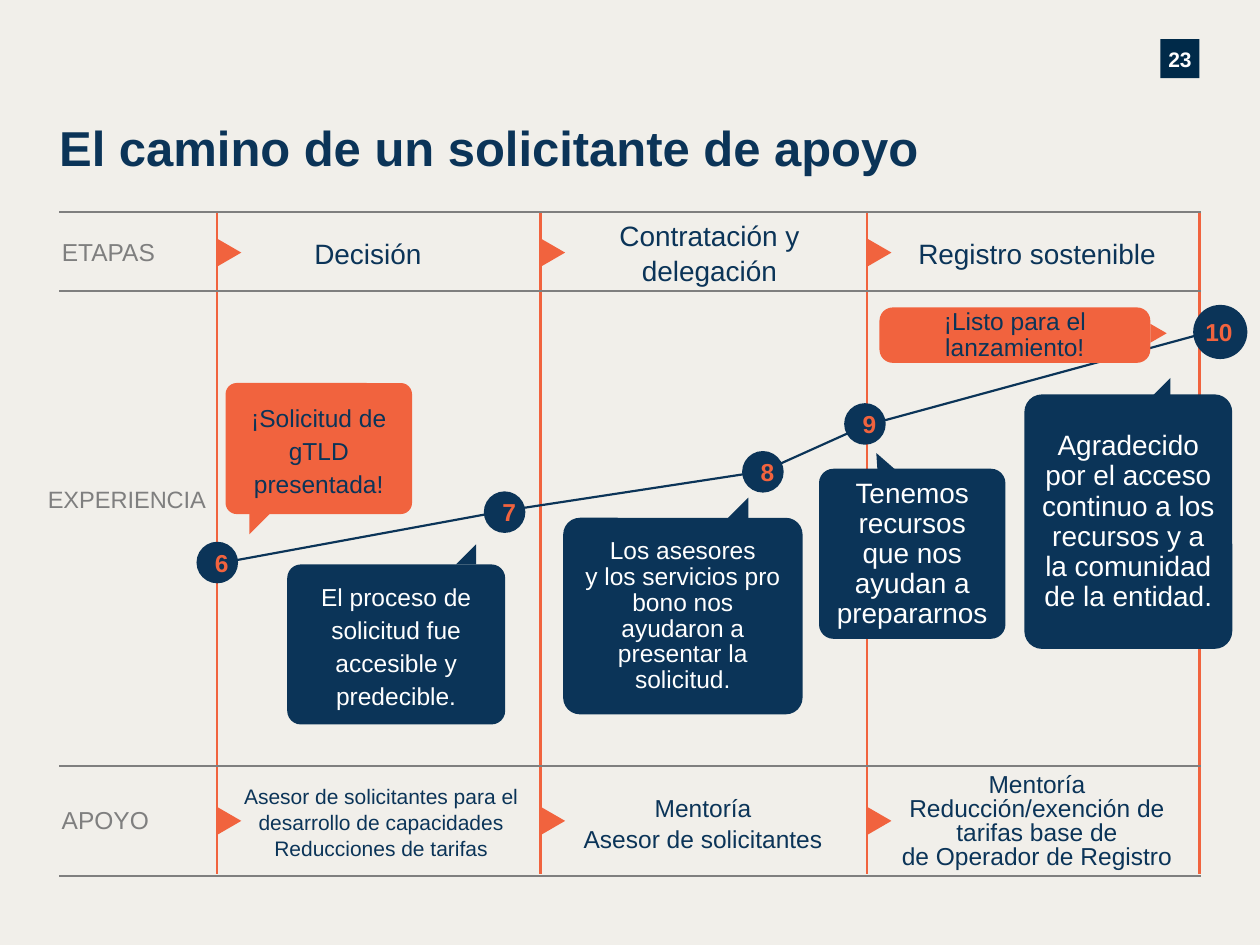
from lxml import etree
from pptx import Presentation
from pptx.dml.color import RGBColor
from pptx.enum.shapes import MSO_CONNECTOR, MSO_SHAPE
from pptx.enum.text import MSO_ANCHOR, MSO_AUTO_SIZE, PP_ALIGN
from pptx.oxml.ns import qn
from pptx.util import Pt

RECTANGLE, ROUNDED, OVAL = MSO_SHAPE.RECTANGLE, MSO_SHAPE.ROUNDED_RECTANGLE, MSO_SHAPE.OVAL
TRIANGLE, RIGHT_TRIANGLE = MSO_SHAPE.ISOSCELES_TRIANGLE, MSO_SHAPE.RIGHT_TRIANGLE
STRAIGHT = MSO_CONNECTOR.STRAIGHT
LEFT, CENTER = PP_ALIGN.LEFT, PP_ALIGN.CENTER
TOP, MIDDLE = MSO_ANCHOR.TOP, MSO_ANCHOR.MIDDLE
NO_AUTOFIT = MSO_AUTO_SIZE.NONE

PX = 9144
THEME = {
    "font": "Arial",
    "paper": RGBColor.from_string("F1EFEA"),
    "navy": RGBColor.from_string("0B3458"),
    "badge": RGBColor.from_string("002A49"),
    "orange": RGBColor.from_string("F1633E"),
    "gray": RGBColor.from_string("7F7F7F"),
    "white": RGBColor.from_string("FFFFFF"),
    "title": 28,
    "large": 16,
    "body": 14,
    "label": 13.5,
    "small": 12,
    "line": 1.25,
}
NO_INSETS = (0, 0, 0, 0)
TEXT_INSETS = (10, 5, 10, 5)
BUBBLE_INSETS = (8, 4, 8, 4)

presentation = Presentation()
presentation.slide_width = 1000 * PX
presentation.slide_height = 750 * PX
slide = presentation.slides.add_slide(presentation.slide_layouts[5])
slide.background.fill.solid()
slide.background.fill.fore_color.rgb = THEME["paper"]


def write(shape, text, size, color, insets=NO_INSETS, spacing=1.0, bold=False, align=CENTER, anchor=MIDDLE):
    frame = shape.text_frame
    margins = zip(("margin_left", "margin_top", "margin_right", "margin_bottom"), insets)
    frame_format = {name: value * PX for name, value in margins}
    frame_format |= {"word_wrap": True, "auto_size": NO_AUTOFIT, "vertical_anchor": anchor}
    for name, value in frame_format.items():
        setattr(frame, name, value)
    paragraph = frame.paragraphs[0]
    paragraph.text = text
    paragraph.alignment = align
    paragraph.line_spacing = Pt(spacing) if spacing > 2 else spacing
    for run in paragraph.runs:
        for name, value in {"name": THEME["font"], "size": Pt(THEME[size]), "bold": bold}.items():
            setattr(run.font, name, value)
        run.font.color.rgb = THEME[color]


def draw(kind, box, fill, rotation=0):
    shape = slide.shapes.add_shape(kind, *(value * PX for value in box))
    shape.shadow.inherit = False
    shape.fill.solid()
    shape.fill.fore_color.rgb = THEME[fill]
    shape.line.fill.background()
    shape.rotation = rotation
    return shape


title = slide.shapes.title
for name, value in {"left": 47, "top": 93, "width": 793, "height": 58}.items():
    setattr(title, name, value * PX)
write(title, "El camino de un solicitante de apoyo", "title", "navy", bold=True, align=LEFT, anchor=TOP)

badge = draw(RECTANGLE, (921, 31, 31, 31), "badge")
write(badge, "23", "small", "white", spacing=1.08, bold=True)

column_edges = (172, 429, 688, 952)
row_edges = (168, 231, 608, 695)
path_points = ((169, 448), (403, 405), (606, 374), (686, 338), (954, 265))
lines = [(x, 168, x, 694, "orange") for x in column_edges]
lines += [(47, y, 953, y, "gray") for y in row_edges]
lines += [(*start, *end, "navy") for start, end in zip(path_points, path_points[1:])]
for *ends, color in lines:
    connector = slide.shapes.add_connector(STRAIGHT, *(value * PX for value in ends))
    connector.line.color.rgb = THEME[color]
    connector.line.width = Pt(THEME["line"])
    etree.SubElement(connector._element.spPr, qn("a:effectLst"))

for x in column_edges[:-1]:
    for y in (191, 642):
        draw(TRIANGLE, (x - 1, y, 22, 19), "orange", 90)

texts = (
    ((171, 177, 242, 46), "Decisión", "large", "navy", NO_INSETS, 1.06),
    ((442, 177, 242, 46), "Contratación y delegación", "large", "navy", NO_INSETS, 1.06),
    ((702, 177, 242, 46), "Registro sostenible", "large", "navy", NO_INSETS, 1.06),
    ((167, 614, 259, 77), "Asesor de solicitantes para el desarrollo de capacidades\nReducciones de tarifas",
     "small", "navy", (12, 0, 0, 0), 14.8),
    ((429, 614, 258, 77), "Mentoría\nAsesor de solicitantes", "body", "navy", TEXT_INSETS, 1.06),
    ((694, 614, 258, 77), "Mentoría Reducción/exención de tarifas base de\nde Operador de Registro",
     "body", "navy", TEXT_INSETS, 13.8),
    ((49, 188, 109, 24), "ETAPAS", "body", "gray", NO_INSETS, 1.0, False, LEFT, TOP),
    ((38, 385, 133, 24), "EXPERIENCIA", "label", "gray", NO_INSETS, 1.0, False, LEFT, TOP),
    ((49, 639, 123, 24), "APOYO", "body", "gray", NO_INSETS, 1.0, False, LEFT, TOP),
)
for box, *content in texts:
    textbox = slide.shapes.add_textbox(*(value * PX for value in box))
    write(textbox, *content)

steps = (
    (6, 156, 430, 33, TEXT_INSETS),
    (7, 384, 390, 33, TEXT_INSETS),
    (8, 589, 358, 33, TEXT_INSETS),
    (9, 670, 320, 33, TEXT_INSETS),
    (10, 947, 242, 43, (0, 0, 2, 0)),
)
for number, left, top, diameter, insets in steps:
    circle = draw(OVAL, (left, top, diameter, diameter), "navy")
    write(circle, str(number), "body", "orange", insets, bold=True)

bubbles = (
    ((179, 304, 148, 104), 0.085, "orange", "¡Solicitud de gTLD presentada!", "body", "navy", 1.12),
    ((228, 448, 173, 127), 0.085, "navy", "El proceso de solicitud fue accesible y predecible.",
     "body", "white", 1.12),
    ((447, 411, 190, 156), 0.085, "navy",
     "Los asesores\ny los servicios pro bono nos ayudaron a presentar la solicitud.", "body", "white", 14.8),
    ((650, 372, 148, 135), 0.085, "navy", "Tenemos recursos que nos ayudan a prepararnos",
     "large", "white", 17.2),
    ((813, 313, 165, 202), 0.085, "navy",
     "Agradecido por el acceso continuo a los recursos y a la comunidad de la entidad.", "large", "white", 17.2),
    ((698, 244, 215, 44), 0.24, "orange", "¡Listo para el lanzamiento!", "body", "navy", 14.8),
)
for box, corner, fill, text, size, color, spacing in bubbles:
    bubble = draw(ROUNDED, box, fill)
    bubble.adjustments[0] = corner
    write(bubble, text, size, color, BUBBLE_INSETS, spacing)

tails = (
    (198, 408, "orange", 180, True),
    (362, 432, "navy", 0, True),
    (578, 395, "navy", 0, True),
    (696, 359, "navy", 356.3, False),
    (913, 300, "navy", 0, True),
)
for left, top, fill, rotation, flipped in tails:
    tail = draw(RIGHT_TRIANGLE, (left, top, 16, 16), fill, rotation)
    if flipped:
        tail._element.spPr.xfrm.set("flipH", "1")
draw(TRIANGLE, (912, 258, 15, 13), "orange", 90)

presentation.save("out.pptx")
